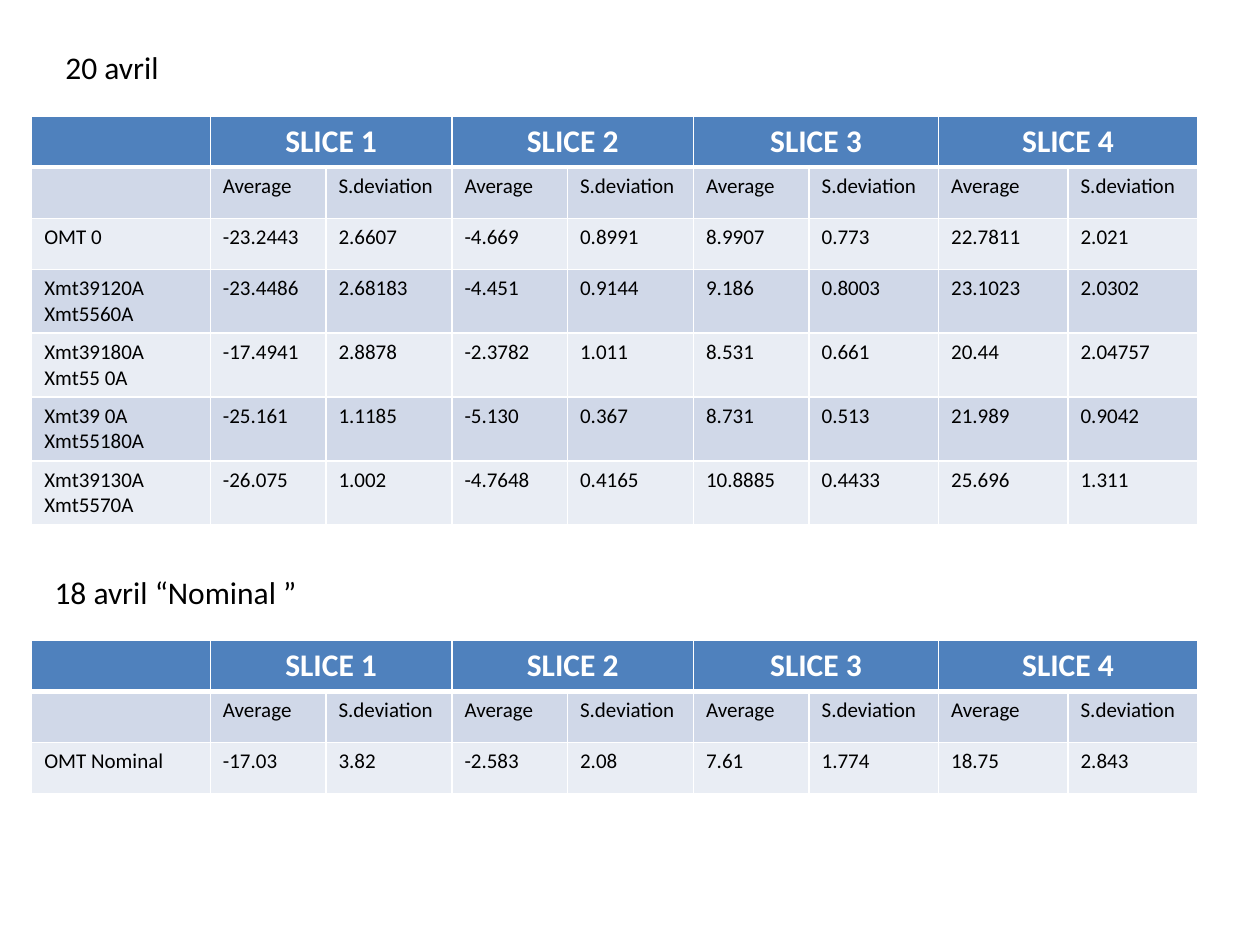
from lxml.etree import SubElement
from pptx import Presentation
from pptx.dml.color import RGBColor
from pptx.enum.text import MSO_AUTO_SIZE, PP_ALIGN
from pptx.oxml.ns import qn
from pptx.util import Cm, Pt

HEADER_FILL = "4F81BD"
BAND_FILLS = ("E9EDF4", "D0D8E8")
WHITE = "FFFFFF"
HEADER_TEXT = {"size": Pt(18), "bold": True, "color": WHITE}
BODY_TEXT = {"size": Pt(12), "bold": False, "color": "000000"}
LABEL_TEXT = {"size": Pt(18), "color": "000000"}

SLICES = ("SLICE 1", "SLICE 2", "SLICE 3", "SLICE 4")
COLUMN_WIDTHS = (3.6, 2.33, 2.54, 2.33, 2.54, 2.33, 2.61, 2.61, 2.61)
ROW_HEIGHT = 1.03
TABLE_LEFT = 0.64

APRIL_20 = [
    ("OMT 0", "-23.2443", "2.6607", "-4.669", "0.8991",
     "8.9907", "0.773", "22.7811", "2.021"),
    ("Xmt39120A\nXmt5560A", "-23.4486", "2.68183", "-4.451", "0.9144",
     "9.186", "0.8003", "23.1023", "2.0302"),
    ("Xmt39180A\nXmt55 0A", "-17.4941", "2.8878", "-2.3782", "1.011",
     "8.531", "0.661", "20.44", "2.04757"),
    ("Xmt39 0A\nXmt55180A", "-25.161", "1.1185", "-5.130", "0.367",
     "8.731", "0.513", "21.989", "0.9042"),
    ("Xmt39130A\nXmt5570A", "-26.075", "1.002", "-4.7648", "0.4165",
     "10.8885", "0.4433", "25.696", "1.311"),
]
APRIL_18 = [
    ("OMT Nominal", "-17.03", "3.82", "-2.583", "2.08",
     "7.61", "1.774", "18.75", "2.843"),
]


def color(hex_string):
    return RGBColor.from_string(hex_string)


class SlideBuilder:
    def __init__(self, slide, font_name):
        self.slide = slide
        self.font_name = font_name

    def format_text(self, text_frame, text_format, alignment=PP_ALIGN.LEFT):
        for paragraph in text_frame.paragraphs:
            paragraph.alignment = alignment
            for run in paragraph.runs:
                run.font.name = self.font_name
                for name, value in text_format.items():
                    if name == "color":
                        run.font.color.rgb = color(value)
                    else:
                        setattr(run.font, name, value)

    def label(self, text, left, top, width, height):
        shape = self.slide.shapes.add_textbox(
            Cm(left), Cm(top), Cm(width), Cm(height))
        text_frame = shape.text_frame
        text_frame.word_wrap = False
        text_frame.auto_size = MSO_AUTO_SIZE.SHAPE_TO_FIT_TEXT
        text_frame.text = text
        self.format_text(text_frame, LABEL_TEXT)

    def borders(self, cell, top, bottom):
        """Draw white cell borders; top and bottom are widths in points."""
        properties = cell._tc.get_or_add_tcPr()
        widths = {"a:lnL": 1, "a:lnR": 1, "a:lnT": top, "a:lnB": bottom}
        for tag, width in widths.items():
            line = SubElement(properties, qn(tag), w=str(Pt(width)))
            fill = SubElement(line, qn("a:solidFill"))
            SubElement(fill, qn("a:srgbClr"), val=WHITE)

    def cell(self, cell, text, row):
        is_header = row == 0
        self.borders(cell, 3 if row == 1 else 1, 3 if is_header else 1)
        cell.fill.solid()
        cell.fill.fore_color.rgb = color(
            HEADER_FILL if is_header else BAND_FILLS[row % 2])
        if text:
            cell.text = text
            self.format_text(
                cell.text_frame,
                HEADER_TEXT if is_header else BODY_TEXT,
                PP_ALIGN.CENTER if is_header else PP_ALIGN.LEFT)

    def slice_table(self, measurements, top):
        """Add a table with two columns per slice under a merged header."""
        header = [""]
        for name in SLICES:
            header += [name, ""]
        subheader = ["", *("Average", "S.deviation") * len(SLICES)]
        rows = [header, subheader, *measurements]
        table = self.slide.shapes.add_table(
            len(rows), len(COLUMN_WIDTHS), Cm(TABLE_LEFT), Cm(top),
            Cm(sum(COLUMN_WIDTHS)), Cm(ROW_HEIGHT * len(rows))).table
        table.horz_banding = False
        for column, width in zip(table.columns, COLUMN_WIDTHS):
            column.width = Cm(width)
        for row in table.rows:
            row.height = Cm(ROW_HEIGHT)
        for row, texts in enumerate(rows):
            for column, text in enumerate(texts):
                self.cell(table.cell(row, column), text, row)
        for column in range(1, len(COLUMN_WIDTHS), 2):
            table.cell(0, column).merge(table.cell(0, column + 1))


def main():
    presentation = Presentation()
    presentation.slide_width = Cm(25.4)
    presentation.slide_height = Cm(19.05)
    slide = presentation.slides.add_slide(presentation.slide_layouts[6])
    builder = SlideBuilder(slide, "Calibri")
    builder.slice_table(APRIL_20, 2.34)
    builder.label("20 avril", 1.07, 0.84, 2.41, 1.03)
    builder.label("18 avril “Nominal ”", 0.85, 11.43, 5.44, 1.03)
    builder.slice_table(APRIL_18, 12.91)
    presentation.save("out.pptx")


if __name__ == "__main__":
    main()
